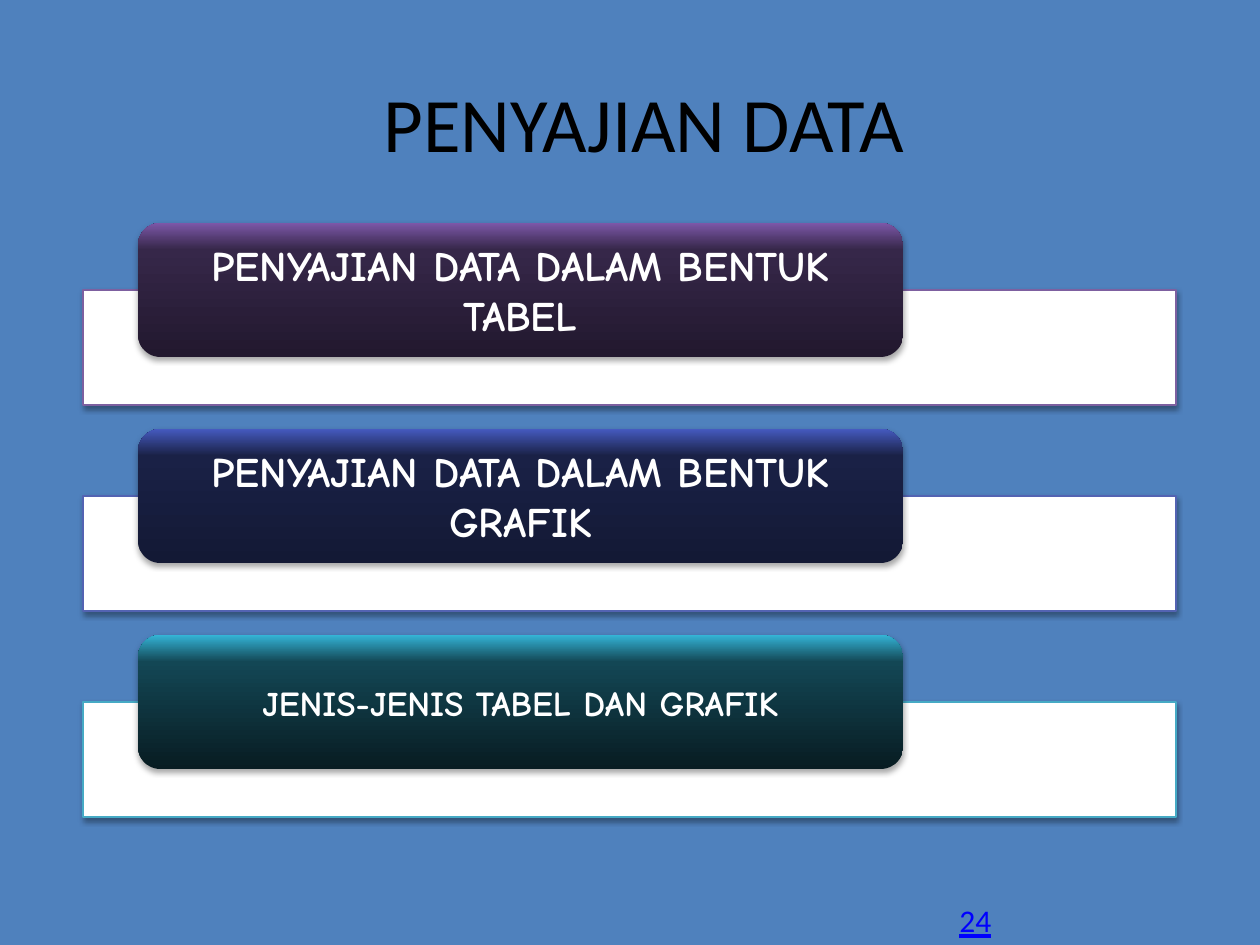
from dataclasses import dataclass

from lxml.etree import SubElement
from pptx import Presentation
from pptx.dml.color import RGBColor
from pptx.enum.shapes import MSO_SHAPE as Shape
from pptx.enum.text import MSO_ANCHOR as Anchor, PP_ALIGN as Align
from pptx.oxml.ns import qn
from pptx.util import Emu, Pt

PX = 914400 / 126


@dataclass(frozen=True)
class Theme:
    """Colours, fonts and type sizes of the slide."""
    background: str = "4F81BD"
    white: str = "FFFFFF"
    black: str = "000000"
    link: str = "0000FF"
    body_font: str = "Calibri"
    label_font: str = "Comic Neue"
    title_size: int = 44
    number_size: int = 18


THEME = Theme()

TOPICS = [
    dict(text="PENYAJIAN DATA DALAM BENTUK TABEL", size=24, line="7D60A0",
         stops=("22182E", "362749", "7C57A8")),
    dict(text="PENYAJIAN DATA DALAM BENTUK GRAFIK", size=24, line="5363B2",
         stops=("131935", "1A2146", "455ABF")),
    dict(text="JENIS-JENIS TABEL DAN GRAFIK", size=20, line="46AAC5",
         stops=("081C22", "134755", "34B4D6")),
]


def px(*values):
    """Turn px lengths into EMU."""
    return [Emu(round(v * PX)) for v in values]


def write(tf, text, color, align, **font):
    """Write one formatted run into a text frame."""
    p = tf.paragraphs[0]
    p.alignment = align
    r = p.add_run()
    r.text = text
    r.font.color.rgb = RGBColor.from_string(color)
    for name, value in font.items():
        setattr(r.font, name, value)


def add_shadow(sp):
    """Give a shape a soft shadow straight below it."""
    sp.shadow.inherit = False
    effects = sp._element.spPr.find(qn("a:effectLst"))
    shadow = SubElement(effects, qn("a:outerShdw"), blurRad="40000",
                        dist="23000", dir="5400000", rotWithShape="0")
    color = SubElement(shadow, qn("a:srgbClr"), val=THEME.black)
    SubElement(color, qn("a:alpha"), val="35000")


def fill_gradient(sp, colors):
    """Fill a shape with three colours running from bottom to top."""
    sp.fill.gradient()
    sp.fill.gradient_angle = 90
    stops = sp._element.spPr.find(qn("a:gradFill")).find(qn("a:gsLst"))
    for stop in list(stops):
        stops.remove(stop)
    for pos, color in zip((0, 80, 100), colors):
        stop = SubElement(stops, qn("a:gs"), pos=str(pos * 1000))
        SubElement(stop, qn("a:srgbClr"), val=color)


def add_title(slide, text, box):
    """Place the title placeholder in its box."""
    sp = slide.shapes.title
    sp.left, sp.top, sp.width, sp.height = px(*box)
    write(sp.text_frame, text, THEME.black, Align.CENTER,
          name=THEME.body_font, size=Pt(THEME.title_size))


def add_topic(slide, topic, box):
    """Draw a white bar with a rounded label over its top edge."""
    x, y, w, h = box
    group = slide.shapes.add_group_shape()
    bar = group.shapes.add_shape(
        Shape.RECTANGLE, *px(x, y + 67, w, h - 67))
    bar.fill.solid()
    bar.fill.fore_color.rgb = RGBColor.from_string(THEME.white)
    bar.line.color.rgb = RGBColor.from_string(topic["line"])
    bar.line.width = Pt(0.75)
    label = group.shapes.add_shape(
        Shape.ROUNDED_RECTANGLE, *px(x + 55, y, w * 0.7, 134))
    fill_gradient(label, topic["stops"])
    label.line.fill.background()
    for sp in (bar, label):
        add_shadow(sp)
    tf = label.text_frame
    tf.word_wrap = True
    tf.vertical_anchor = Anchor.MIDDLE
    tf.margin_left, tf.margin_right = px(34, 34)
    write(tf, topic["text"], THEME.white, Align.CENTER,
          name=THEME.label_font, size=Pt(topic["size"]), bold=True)


def add_topics(slide, topics, box, pitch):
    """Stack the topics at an equal pitch."""
    x, y, w, h = box
    for i, topic in enumerate(topics):
        add_topic(slide, topic, (x, y + i * pitch, w, h))


def add_number(slide, text, box):
    """Write the underlined slide number."""
    tf = slide.shapes.add_textbox(*px(*box)).text_frame
    tf.word_wrap = False
    write(tf, text, THEME.link, Align.LEFT, name=THEME.body_font,
          size=Pt(THEME.number_size), underline=True)


def main():
    """Build and save the slide."""
    prs = Presentation()
    prs.slide_width, prs.slide_height = px(1260, 945)
    slide = prs.slides.add_slide(prs.slide_layouts[5])
    slide.background.fill.solid()
    slide.background.fill.fore_color.rgb = RGBColor.from_string(
        THEME.background)
    add_number(slide, "24", (947, 895, 58, 50))
    add_title(slide, "PENYAJIAN DATA", (63, 63, 1162, 118))
    add_topics(slide, TOPICS, (83, 223, 1093, 182), 206)
    prs.save("out.pptx")


if __name__ == "__main__":
    main()
